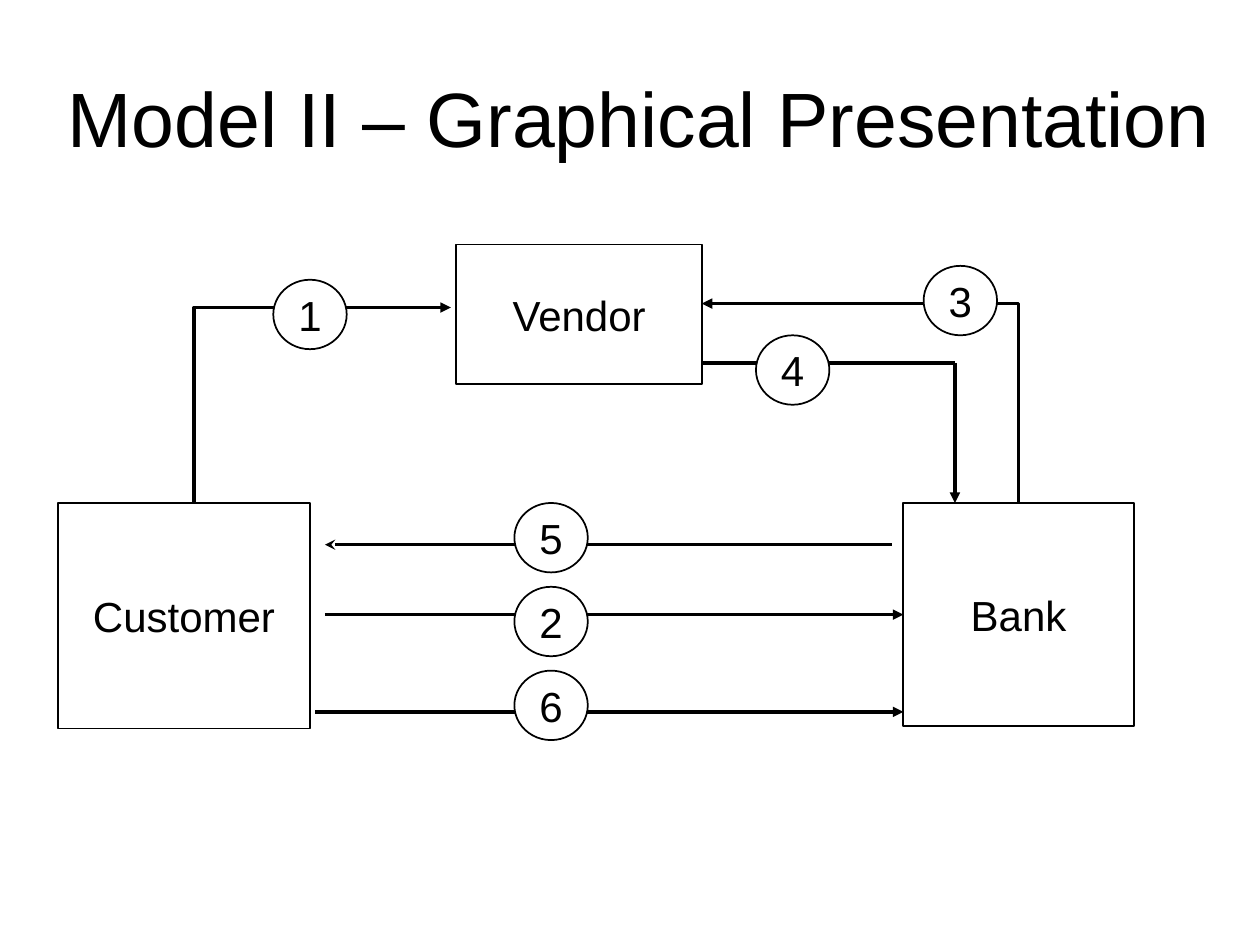
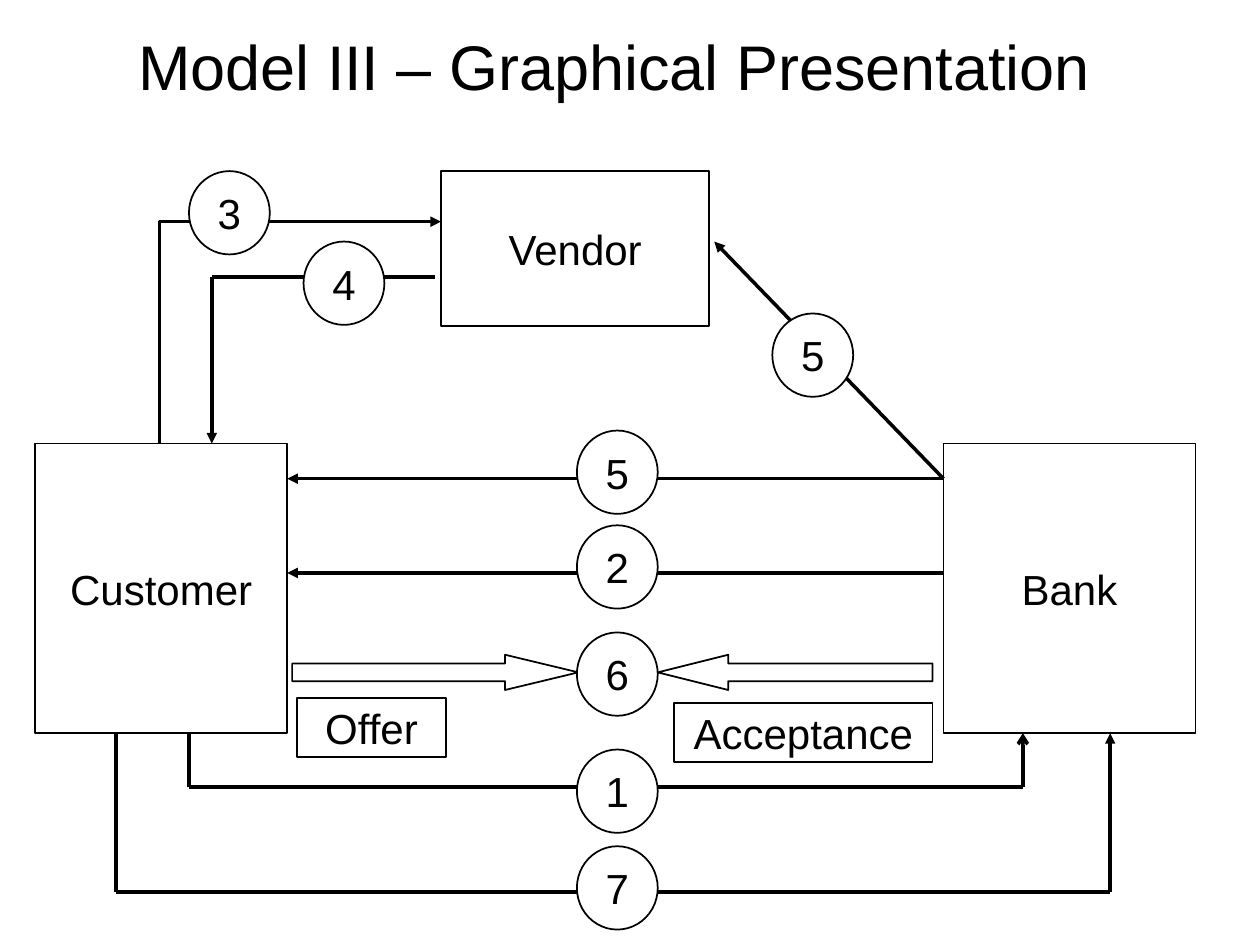
from dataclasses import dataclass
from itertools import pairwise

from lxml.etree import SubElement
from pptx import Presentation
from pptx.dml.color import RGBColor
from pptx.enum.shapes import MSO_CONNECTOR as Link, MSO_SHAPE as Preset
from pptx.enum.text import MSO_ANCHOR as Anchor, PP_ALIGN as Align
from pptx.oxml.ns import qn
from pptx.util import Cm, Pt


@dataclass(frozen=True)
class Theme:
    """Colours, type sizes and line widths shared by all slides."""
    ink: RGBColor = RGBColor(0, 0, 0)
    paper: RGBColor = RGBColor(255, 255, 255)
    font: str = "Arial"
    label: int = 24
    outline: float = 1
    flow: float = 2


@dataclass(frozen=True)
class Box:
    """A rectangle in centimetres."""
    left: float
    top: float
    width: float
    height: float

    def lengths(self):
        """Return the four sides as slide lengths."""
        return Cm(self.left), Cm(self.top), Cm(self.width), Cm(self.height)


THEME = Theme()


def write(shape, text, size):
    """Put one centred line of text in a shape."""
    frame = shape.text_frame
    frame.vertical_anchor = Anchor.MIDDLE
    para = frame.paragraphs[0]
    para.text = text
    para.alignment = Align.CENTER
    para.font.name = THEME.font
    para.font.size = Pt(size)
    para.font.color.rgb = THEME.ink


def add_title(page, box, text, size):
    """Add the slide title."""
    title = page.shapes.add_textbox(*box.lengths())
    title.text_frame.word_wrap = True
    write(title, text, size)


class Diagram:
    """Draws the parts of a flow diagram relative to its box."""

    def __init__(self, page, box, badge_size):
        """Keep the page, the box and the size of the number badges."""
        self.shapes = page.shapes
        self.box = box
        self.badge_size = badge_size

    def place(self, x, y):
        """Turn a point of the box into a point of the slide."""
        return Cm(self.box.left + x), Cm(self.box.top + y)

    def outline(self, preset, x, y, width, height, text=""):
        """Add a white outlined shape, with a label if one is given."""
        shape = self.shapes.add_shape(preset, *self.place(x, y), Cm(width), Cm(height))
        shape.shadow.inherit = False
        shape.fill.solid()
        shape.fill.fore_color.rgb = THEME.paper
        shape.line.color.rgb = THEME.ink
        shape.line.width = Pt(THEME.outline)
        if text:
            write(shape, text, THEME.label)
            shape.text_frame.word_wrap = False
        return shape

    def party(self, name, x, y, width, height):
        """Add a labelled rectangle."""
        return self.outline(Preset.RECTANGLE, x, y, width, height, name)

    def badge(self, number, x, y):
        """Add a numbered ellipse."""
        self.outline(Preset.OVAL, x, y, *self.badge_size, number)

    def block_arrow(self, preset, x, y, width, height, point):
        """Add a thin block arrow with a long point."""
        arrow = self.outline(preset, x, y, width, height)
        arrow.adjustments[1] = point

    def line(self, start, end, head=None, kind=Link.STRAIGHT):
        """Add a connector with an optional arrowhead at its end."""
        link = self.shapes.add_connector(kind, *self.place(*start), *self.place(*end))
        link.line.color.rgb = THEME.ink
        link.line.width = Pt(THEME.flow)
        if head:
            SubElement(link.line._get_or_add_ln(), qn("a:tailEnd"), type=head)
        SubElement(link._element.spPr, qn("a:effectLst"))
        return link

    def elbow(self, start, end):
        """Add an arrow that runs vertically first, then horizontally."""
        link = self.line(start, end, "triangle", Link.ELBOW)
        guides = link._element.spPr.find(qn("a:prstGeom")).get_or_add_avLst()
        SubElement(guides, qn("a:gd"), name="adj1", fmla="val 0")

    def route(self, points, head="triangle"):
        """Join points with straight legs, the last one with an arrowhead."""
        for start, end in pairwise(points):
            self.line(start, end, head if end == points[-1] else None)


def draw_model_two(page, box):
    """Draw the flows of the second model."""
    diagram = Diagram(page, box, (1.48, 1.4))
    diagram.party("Vendor", 8.03, 0, 4.95, 2.82)
    diagram.party("Customer", 0, 5.21, 5.08, 4.55)
    bank_left, bank_top, bank_height = 17.04, 5.21, 4.5
    bank = diagram.party("Bank", bank_left, bank_top, 4.65, bank_height)

    diagram.elbow((2.74, 5.21), (7.92, 1.27))
    diagram.elbow((19.36, bank_top), (12.98, 1.19))
    diagram.route([(13, 2.39), (18.08, 2.39), (18.08, bank_top)])
    diagram.line((16.81, 6.05), (5.38, 6.05), "stealth")
    order = diagram.line((5.38, 7.46), (bank_left, bank_top + bank_height / 2), "triangle")
    order.end_connect(bank, 1)
    diagram.line((5.18, 9.42), (bank_left, 9.42), "triangle")

    for number, x, y in (("1", 4.34, 0.71), ("3", 17.45, 0.43), ("4", 14.07, 1.83)):
        diagram.badge(number, x, y)
    for row, number in enumerate("526"):
        diagram.badge(number, 9.2, 5.21 + 1.69 * row)


def draw_model_three(page, box):
    """Draw the flows of the third model."""
    diagram = Diagram(page, box, (1.63, 1.68))
    side, party_top, party_height = 5.08, 5.49, 5.84
    bank_left, party_bottom = 18.31, party_top + party_height
    diagram.party("Vendor", 8.18, 0, 5.41, 3.12)
    diagram.party("Customer", 0, party_top, side, party_height)
    diagram.party("Bank", bank_left, party_top, side, party_height)
    diagram.party("Offer", 5.28, 10.62, 3, 1.19)
    diagram.party("Acceptance", 12.88, 10.72, 5.21, 1.19)
    diagram.block_arrow(Preset.RIGHT_ARROW, 5.18, 9.75, 5.77, 0.71, 2.08)
    diagram.block_arrow(Preset.LEFT_ARROW, 12.55, 9.75, 5.54, 0.71, 2)

    diagram.elbow((2.51, party_top), (8.18, 1.02))
    diagram.route([(8.05, 2.13), (3.56, 2.13), (3.56, party_top)])
    diagram.line((bank_left, 6.2), (13.69, 1.42), "triangle")
    for y in (6.2, 8.1):
        diagram.line((bank_left, y), (side, y), "triangle")
    for left, right, depth, head in ((3.1, 19.91, 12.42, "arrow"), (1.63, 21.67, 14.53, "triangle")):
        diagram.route([(left, party_bottom), (left, depth), (right, depth), (right, party_bottom)], head)

    for number, x, y in (("3", 3.1, 0), ("4", 5.41, 1.42), ("5", 14.86, 2.87)):
        diagram.badge(number, x, y)
    for number, y in zip("52617", (5.23, 7.14, 9.3, 11.66, 13.61)):
        diagram.badge(number, 10.92, y)


def main():
    """Build and save the deck."""
    deck = Presentation()
    deck.slide_width, deck.slide_height = Cm(25.4), Cm(19.05)
    blank = deck.slide_layouts[6]

    page = deck.slides.add_slide(blank)
    draw_model_two(page, Box(1.17, 4.93, 21.69, 9.98))
    add_title(page, Box(1.04, 0.97, 23.7, 2.77), "Model II – Graphical Presentation", 44)

    page = deck.slides.add_slide(blank)
    add_title(page, Box(0.08, 0, 24.61, 2.64), "Model III – Graphical Presentation", 36)
    draw_model_three(page, Box(0.71, 3.45, 23.39, 15.29))

    deck.save("out.pptx")


if __name__ == "__main__":
    main()
